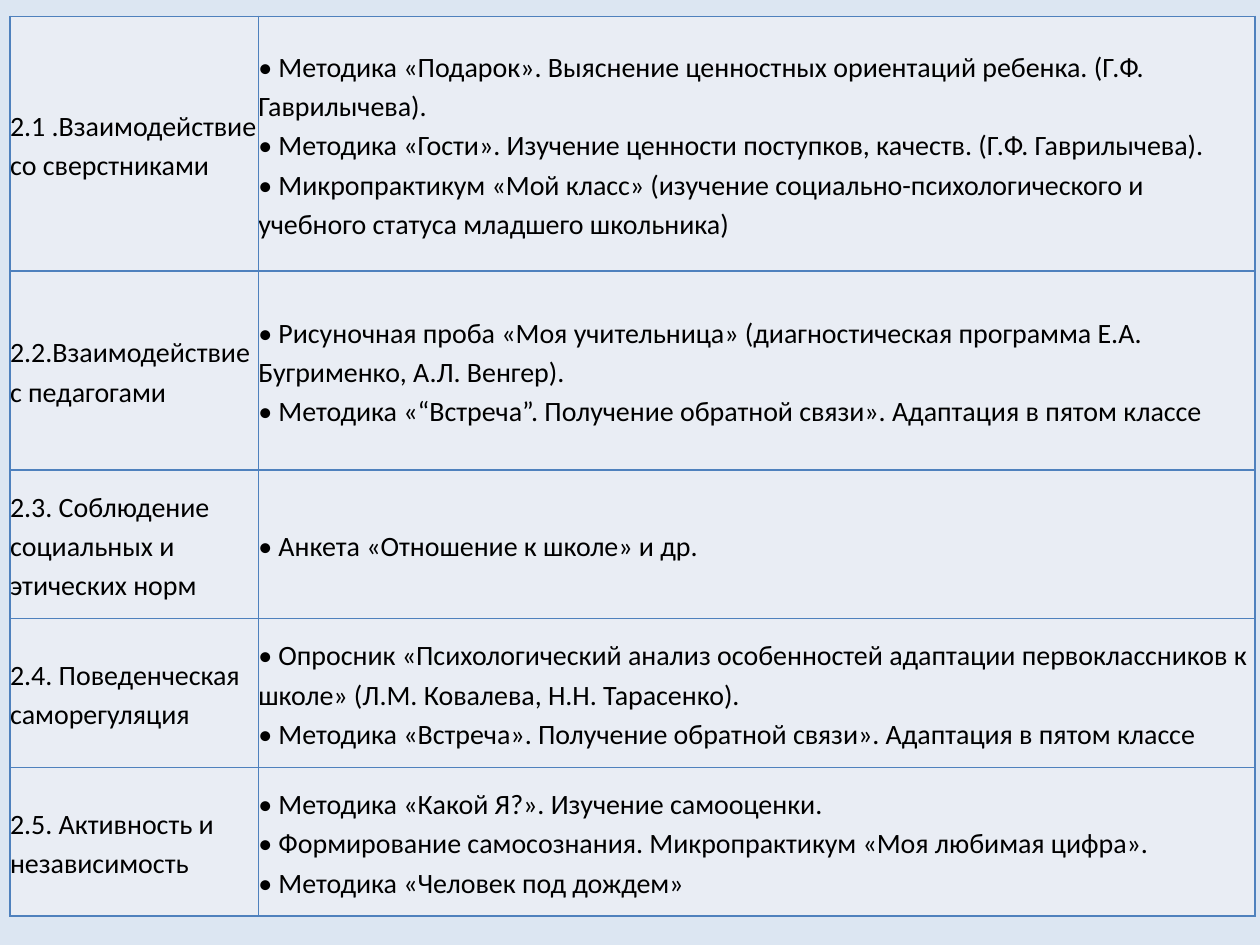
from lxml import etree
from pptx import Presentation, util as u
from pptx.dml.color import RGBColor
from pptx.enum import text
from pptx.oxml.ns import qn

# Content: area of adaptation, methods used
ROWS = [
    ("2.1 .Взаимодействие со сверстниками", [
        "Методика «Подарок». Выяснение ценностных ориентаций ребенка. (Г.Ф. Гаврилычева).",
        "Методика «Гости». Изучение ценности поступков, качеств. (Г.Ф. Гаврилычева).",
        "Микропрактикум «Мой класс» (изучение социально-психологического и учебного статуса младшего школьника)",
    ]),
    ("2.2.Взаимодействие с педагогами", [
        "Рисуночная проба «Моя учительница» (диагностическая программа Е.А. Бугрименко, А.Л. Венгер).",
        "Методика «“Встреча”. Получение обратной связи». Адаптация в пятом классе",
    ]),
    ("2.3. Соблюдение социальных и этических норм", [
        "Анкета «Отношение к школе» и др.",
    ]),
    ("2.4. Поведенческая саморегуляция", [
        "Опросник «Психологический анализ особенностей адаптации первоклассников к школе» (Л.М. Ковалева, Н.Н. Тарасенко).",
        "Методика «Встреча». Получение обратной связи». Адаптация в пятом классе",
    ]),
    ("2.5. Активность и независимость", [
        "Методика «Какой Я?». Изучение самооценки.",
        "Формирование самосознания. Микропрактикум «Моя любимая цифра».",
        "Методика «Человек под дождем»",
    ]),
]
WIDTHS = [1.97, 7.91]
HEIGHTS = [2.02, 1.58, 1.18, 1.18, 1.18]
LEFT, TOP = 0.08, 0.13

BACK, FILL, LINE, INK = "DCE6F2", "E9EDF4", "4F81BD", "000000"
CELL = dict(margin_left=0, margin_right=0, margin_top=0, margin_bottom=0,
            vertical_anchor=text.MSO_ANCHOR.MIDDLE)
FONT = dict(name="Calibri", size=u.Pt(16), bold=False)


def paint(fill, tone):
    fill.solid()
    fill.fore_color.rgb = RGBColor.from_string(tone)


def style(item, form):
    for key, val in form.items():
        setattr(item, key, val)


def frame(cell):
    props = cell._tc.get_or_add_tcPr()
    for side in ("lnL", "lnR", "lnT", "lnB"):
        line = etree.SubElement(props, qn("a:" + side), w=str(u.Pt(1)))
        solid = etree.SubElement(line, qn("a:solidFill"))
        etree.SubElement(solid, qn("a:srgbClr"), val=LINE)


def write(cell, lines):
    style(cell, CELL)
    frame(cell)
    paint(cell.fill, FILL)
    body = cell.text_frame
    body.text = "\n".join(lines)
    for para in body.paragraphs:
        para.line_spacing = 1.15
        for run in para.runs:
            style(run.font, FONT)
            run.font.color.rgb = RGBColor.from_string(INK)


# Slide
deck = Presentation()
deck.slide_width, deck.slide_height = u.Inches(10), u.Inches(7.5)
slide = deck.slides.add_slide(deck.slide_layouts[6])
paint(slide.background.fill, BACK)

# Table
table = slide.shapes.add_table(
    len(ROWS), len(WIDTHS), u.Inches(LEFT), u.Inches(TOP),
    u.Inches(sum(WIDTHS)), u.Inches(sum(HEIGHTS))).table
style(table, dict(first_row=False, horz_banding=False))
for col, wide in zip(table.columns, WIDTHS):
    col.width = u.Inches(wide)
for row, high, (area, tests) in zip(table.rows, HEIGHTS, ROWS):
    row.height = u.Inches(high)
    write(row.cells[0], [area])
    write(row.cells[1], ["• " + test for test in tests])

deck.save("out.pptx")
